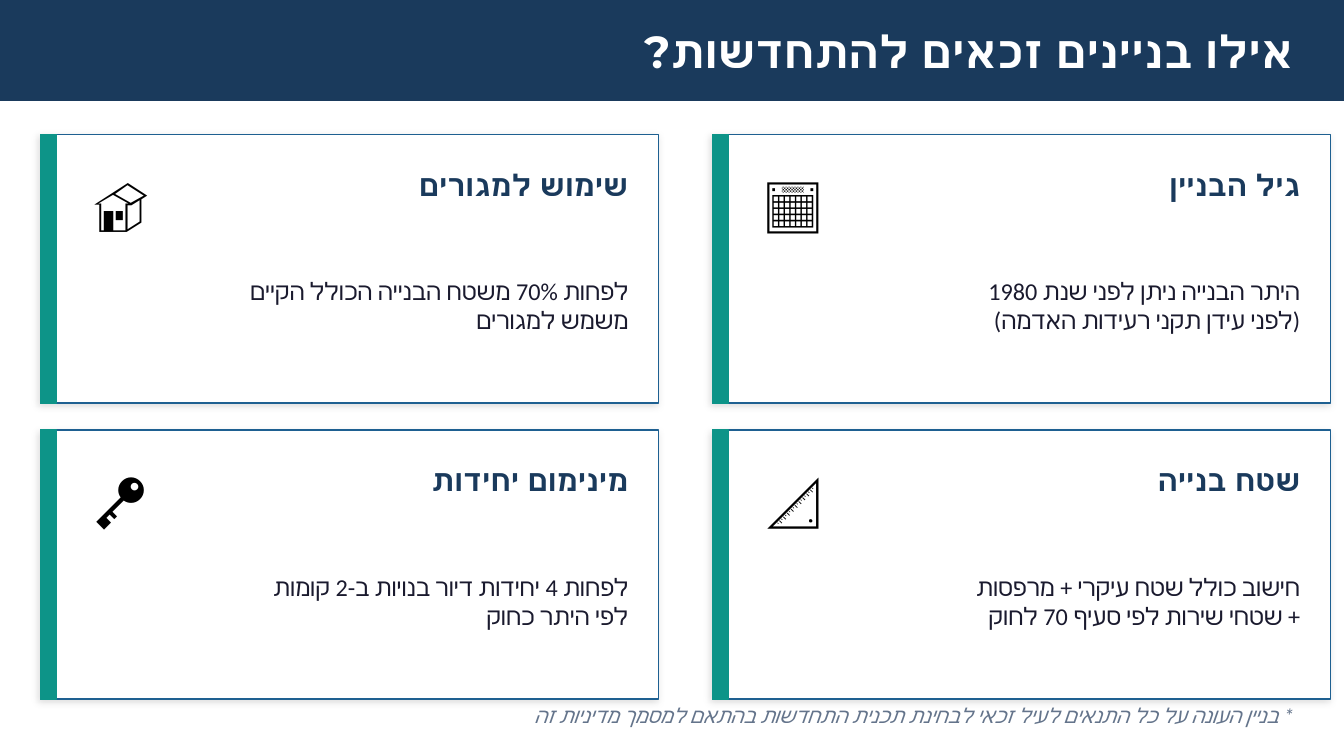
from lxml.etree import SubElement
from pptx import Presentation
from pptx.dml.color import RGBColor
from pptx.enum.shapes import MSO_SHAPE
from pptx.enum.text import MSO_ANCHOR, PP_ALIGN
from pptx.oxml import parse_xml
from pptx.oxml.ns import nsdecls, qn
from pptx.util import Pt

TITLE = "אילו בניינים זכאים להתחדשות?"
CARDS = [
    ("🏠", "שימוש למגורים", ["לפחות 70% משטח הבנייה הכולל הקיים", "משמש למגורים"]),
    ("📅", "גיל הבניין", ["היתר הבנייה ניתן לפני שנת 1980", "(לפני עידן תקני רעידות האדמה)"]),
    ("🔑", "מינימום יחידות", ["לפחות 4 יחידות דיור בנויות ב-2 קומות", "לפי היתר כחוק"]),
    ("📐", "שטח בנייה", ["חישוב כולל שטח עיקרי + מרפסות", "+ שטחי שירות לפי סעיף 70 לחוק"]),
]
FOOTNOTE = "* בניין העונה על כל התנאים לעיל זכאי לבחינת תכנית התחדשות בהתאם למסמך מדיניות זה"

NAVY, BLUE, TEAL, WHITE = "1A3A5C", "1E6091", "0D9488", "FFFFFF"
INK, SLATE, BLACK = "1A1A2E", "64748B", "000000"

WIDTH, HEIGHT, MARGIN = 960, 540, 28.8
COLUMNS = 2
CARD_TOP, CARD_WIDTH, CARD_HEIGHT = 96, 441.6, 192
COLUMN_STEP, ROW_STEP = 480, 211.2
STRIPE_WIDTH = 11.52

SHADOW = f"""<a:effectLst {nsdecls("a")}>
  <a:outerShdw blurRad="{Pt(5)}" dist="{Pt(2)}" dir="8100000" algn="bl" rotWithShape="0">
    <a:srgbClr val="000000"><a:alpha val="12000"/></a:srgbClr>
  </a:outerShdw>
</a:effectLst>"""


def color(hex_string):
    return RGBColor.from_string(hex_string)


def add_rectangle(page, left, top, width, height, fill, line):
    box = page.shapes.add_shape(
        MSO_SHAPE.RECTANGLE, Pt(left), Pt(top), Pt(width), Pt(height))
    box.shadow.inherit = False
    box.fill.solid()
    box.fill.fore_color.rgb = color(fill)
    box.line.color.rgb = color(line)
    box.line.width = Pt(1)
    return box


def add_text(page, left, top, width, height, lines, size, face, ink,
             align=PP_ALIGN.RIGHT, bold=False, italic=False):
    """Add a vertically centred, right-to-left text box."""
    box = page.shapes.add_textbox(Pt(left), Pt(top), Pt(width), Pt(height))
    frame = box.text_frame
    frame.word_wrap = True
    frame.vertical_anchor = MSO_ANCHOR.MIDDLE
    frame.text = "\n".join(lines)
    for para in frame.paragraphs:
        para.alignment = align
        properties = para._p.get_or_add_pPr()
        properties.set("rtl", "1")
        font = para.font
        font.size, font.name = Pt(size), face
        font.bold, font.italic = bold, italic
        font.color.rgb = color(ink)
        # Hebrew takes its typeface from the complex-script slot.
        SubElement(properties.find(qn("a:defRPr")), qn("a:cs"), typeface=face)


def add_card(page, left, top, icon, heading, lines):
    card = add_rectangle(page, left, top, CARD_WIDTH, CARD_HEIGHT, WHITE, BLUE)
    properties = card._element.spPr
    properties.replace(properties.find(qn("a:effectLst")), parse_xml(SHADOW))
    add_rectangle(page, left, top, STRIPE_WIDTH, CARD_HEIGHT, TEAL, TEAL)
    inner = left + 14.4
    add_text(page, inner, top + 14.4, 86.4, 67.2, [icon], 40, "Cabin", BLACK,
             align=PP_ALIGN.CENTER)
    add_text(page, inner + 86.4, top + 11.52, 326.4, 48, [heading],
             21.3, "Montserrat", NAVY, bold=True)
    add_text(page, inner, top + 62.4, 412.8, 120, lines, 17.3, "Calibri", INK)


def main():
    deck = Presentation()
    deck.slide_width, deck.slide_height = Pt(WIDTH), Pt(HEIGHT)
    page = deck.slides.add_slide(deck.slide_layouts[6])
    text_width = WIDTH - 2 * MARGIN

    add_rectangle(page, 0, 0, WIDTH, 72, NAVY, NAVY)
    add_text(page, MARGIN, 4.8, text_width, 62.4, [TITLE],
             32, "Montserrat", WHITE, bold=True)
    for index, card in enumerate(CARDS):
        row, column = divmod(index, COLUMNS)
        add_card(page, MARGIN + column * COLUMN_STEP, CARD_TOP + row * ROW_STEP, *card)
    add_text(page, MARGIN, 494.4, text_width, 33.6, [FOOTNOTE],
             14.7, "Calibri", SLATE, italic=True)
    deck.save("out.pptx")


if __name__ == "__main__":
    main()
